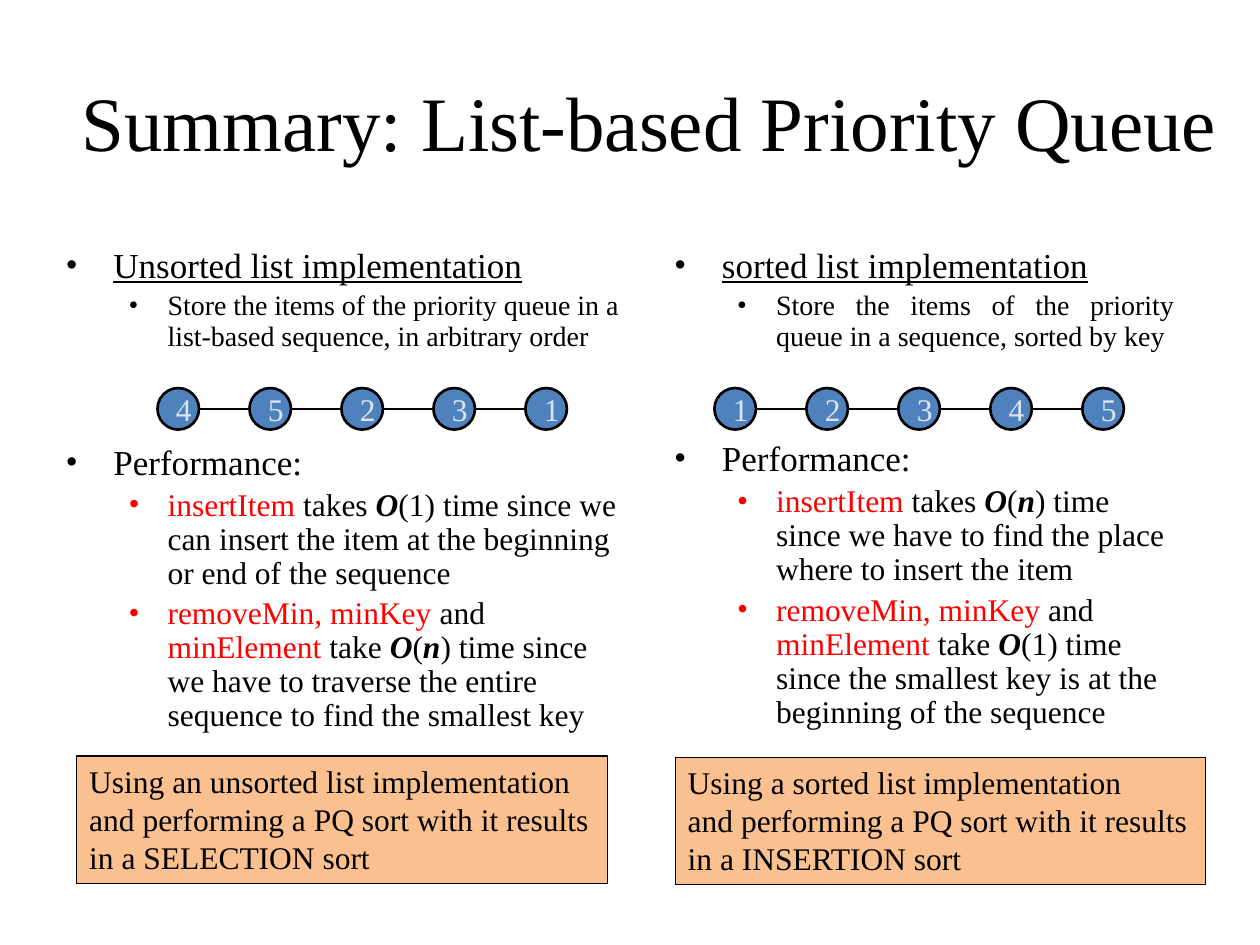
from dataclasses import dataclass
from typing import Optional

from lxml import etree
from pptx import Presentation
from pptx.dml.color import RGBColor
from pptx.enum import shapes, text
from pptx.oxml import ns
from pptx.util import Inches, Pt

FONT = "Times New Roman"
COLORS = {
    "text": "000000",
    "operation": "FF0000",
    "node": "4F81BD",
    "node_text": "DCE6F2",
    "callout": "FAC090",
}
NODE_SIZE = 0.33
NODE_PITCH = 0.73
NODE_TOP = 3.08


@dataclass
class Span:
    text: str
    color: str = "text"
    strong: bool = False
    underline: bool = False


@dataclass
class Bullet:
    spans: list[Span]
    size: int
    level: int = 0
    space_before: Optional[float] = None
    justified: bool = False


@dataclass
class Column:
    """One list implementation: its bullets, its chain of nodes and its callout."""
    box: tuple[float, float, float, float]
    bullets: list[Bullet]
    nodes: str
    nodes_left: float
    callout: str
    callout_left: float
    callout_top: float


def color(name: str) -> RGBColor:
    return RGBColor.from_string(COLORS[name])


def format_run(run, size: int, color_name: str = "text") -> None:
    run.font.name = FONT
    run.font.size = Pt(size)
    run.font.color.rgb = color(color_name)


def place(shape, left: float, top: float, width: float, height: float) -> None:
    shape.left, shape.top = Inches(left), Inches(top)
    shape.width, shape.height = Inches(width), Inches(height)


def style_shape(shape, fill: str, line_width: float) -> None:
    shape.shadow.inherit = False
    shape.fill.solid()
    shape.fill.fore_color.rgb = color(fill)
    shape.line.color.rgb = color("text")
    shape.line.width = Pt(line_width)


def style_text(shape, size: int, color_name: str, anchor) -> None:
    frame = shape.text_frame
    frame.word_wrap = False
    frame.vertical_anchor = anchor
    for paragraph in frame.paragraphs:
        paragraph.alignment = text.PP_ALIGN.LEFT
        for run in paragraph.runs:
            format_run(run, size, color_name)


def set_bullet(paragraph, margin: float, indent: float) -> None:
    properties = paragraph._p.get_or_add_pPr()
    properties.set("marL", str(Inches(margin)))
    properties.set("indent", str(Inches(indent)))
    etree.SubElement(properties, ns.qn("a:buFont")).set("typeface", FONT)
    etree.SubElement(properties, ns.qn("a:buChar")).set("char", "•")


def fill_body(body, bullets: list[Bullet]) -> None:
    frame = body.text_frame
    frame.auto_size = text.MSO_AUTO_SIZE.NONE
    for index, bullet in enumerate(bullets):
        paragraph = frame.add_paragraph() if index else frame.paragraphs[0]
        paragraph.level = bullet.level
        paragraph.line_spacing = 0.9
        paragraph.space_before = Pt(bullet.space_before or 0.2 * bullet.size)
        if bullet.justified:
            paragraph.alignment = text.PP_ALIGN.JUSTIFY
        set_bullet(paragraph, *((0.81, -0.31) if bullet.level else (0.38, -0.38)))
        for span in bullet.spans:
            run = paragraph.add_run()
            run.text = span.text
            format_run(run, bullet.size, span.color)
            run.font.bold = run.font.italic = span.strong
            run.font.underline = span.underline


def draw_chain(slide, labels: str, left: float) -> None:
    """Draw linked nodes as one group, with the link line behind them."""
    group = slide.shapes.add_group_shape()
    middle = Inches(NODE_TOP + NODE_SIZE / 2)
    last_left = left + NODE_PITCH * (len(labels) - 1)
    link = group.shapes.add_connector(
        shapes.MSO_CONNECTOR.STRAIGHT,
        Inches(left + NODE_SIZE), middle, Inches(last_left), middle)
    link.line.color.rgb = color("text")
    link.line.width = Pt(1.5)
    etree.SubElement(link._element.spPr, ns.qn("a:effectLst"))
    for index, label in enumerate(labels):
        node = group.shapes.add_shape(
            shapes.MSO_SHAPE.OVAL, Inches(left + index * NODE_PITCH),
            Inches(NODE_TOP), Inches(NODE_SIZE), Inches(NODE_SIZE))
        style_shape(node, "node", 1.5)
        node.text_frame.text = label
        style_text(node, 18, "node_text", text.MSO_ANCHOR.MIDDLE)


def draw_callout(slide, content: str, left: float, top: float) -> None:
    callout = slide.shapes.add_shape(
        shapes.MSO_SHAPE.RECTANGLE,
        Inches(left), Inches(top), Inches(4.21), Inches(1.01))
    style_shape(callout, "callout", 0.75)
    callout.text_frame.text = content
    style_text(callout, 18, "text", text.MSO_ANCHOR.TOP)


def big_o(argument: str) -> list[Span]:
    return [Span("O", strong=True), Span("("),
            Span(argument, strong=argument.isalpha()), Span(")")]


def column_bullets(heading: str, storage: str, justified: bool, gap: float,
                   insert_cost: str, insert_reason: str,
                   minimum_cost: str, minimum_reason: str) -> list[Bullet]:
    return [
        Bullet([Span(heading, underline=True)], 20),
        Bullet([Span(storage)], 16, 1, justified=justified),
        Bullet([Span("Performance:")], 20, space_before=gap),
        Bullet([Span("insertItem", "operation"), Span(" takes "),
                *big_o(insert_cost), Span(insert_reason)], 18, 1),
        Bullet([Span("removeMin, minKey ", "operation"), Span("and "),
                Span("minElement", "operation"), Span(" take "),
                *big_o(minimum_cost), Span(minimum_reason)], 18, 1),
    ]


def callout_text(kind: str, sort: str) -> str:
    return (f"Using {kind} list implementation\n"
            f"and performing a PQ sort with it results\nin a {sort} sort")


COLUMNS = [
    Column((0.42, 1.92, 4.67, 4.92), column_bullets(
        "Unsorted list implementation",
        "Store the items of the priority queue in a list-based sequence, "
        "in arbitrary order", False, 53,
        "1", " time since we can insert the item at the beginning "
        "or end of the sequence",
        "n", " time since we have to traverse the entire sequence "
        "to find the smallest key"),
        "45231", 1.25, callout_text("an unsorted", "SELECTION"), 0.61, 6),
    Column((5.25, 1.92, 4.17, 4.5), column_bullets(
        "sorted list implementation",
        "Store the items of the priority queue in a sequence, sorted by key",
        True, 51,
        "n", " time since we have to find the place where to insert the item",
        "1", " time since the smallest key is at the beginning of the sequence"),
        "12345", 5.67, callout_text("a sorted", "INSERTION"), 5.36, 6.01),
]


def main() -> None:
    presentation = Presentation()
    presentation.slide_width, presentation.slide_height = Inches(10), Inches(7.5)
    slide = presentation.slides.add_slide(presentation.slide_layouts[3])
    title = slide.shapes.title
    place(title, 0.42, 0.33, 9.47, 1.25)
    title.text_frame.text = "Summary: List-based Priority Queue"
    format_run(title.text_frame.paragraphs[0].runs[0], 44)
    for index, column in enumerate(COLUMNS, start=1):
        body = slide.placeholders[index]
        place(body, *column.box)
        fill_body(body, column.bullets)
        draw_chain(slide, column.nodes, column.nodes_left)
        draw_callout(slide, column.callout, column.callout_left, column.callout_top)
    presentation.save("out.pptx")


if __name__ == "__main__":
    main()
